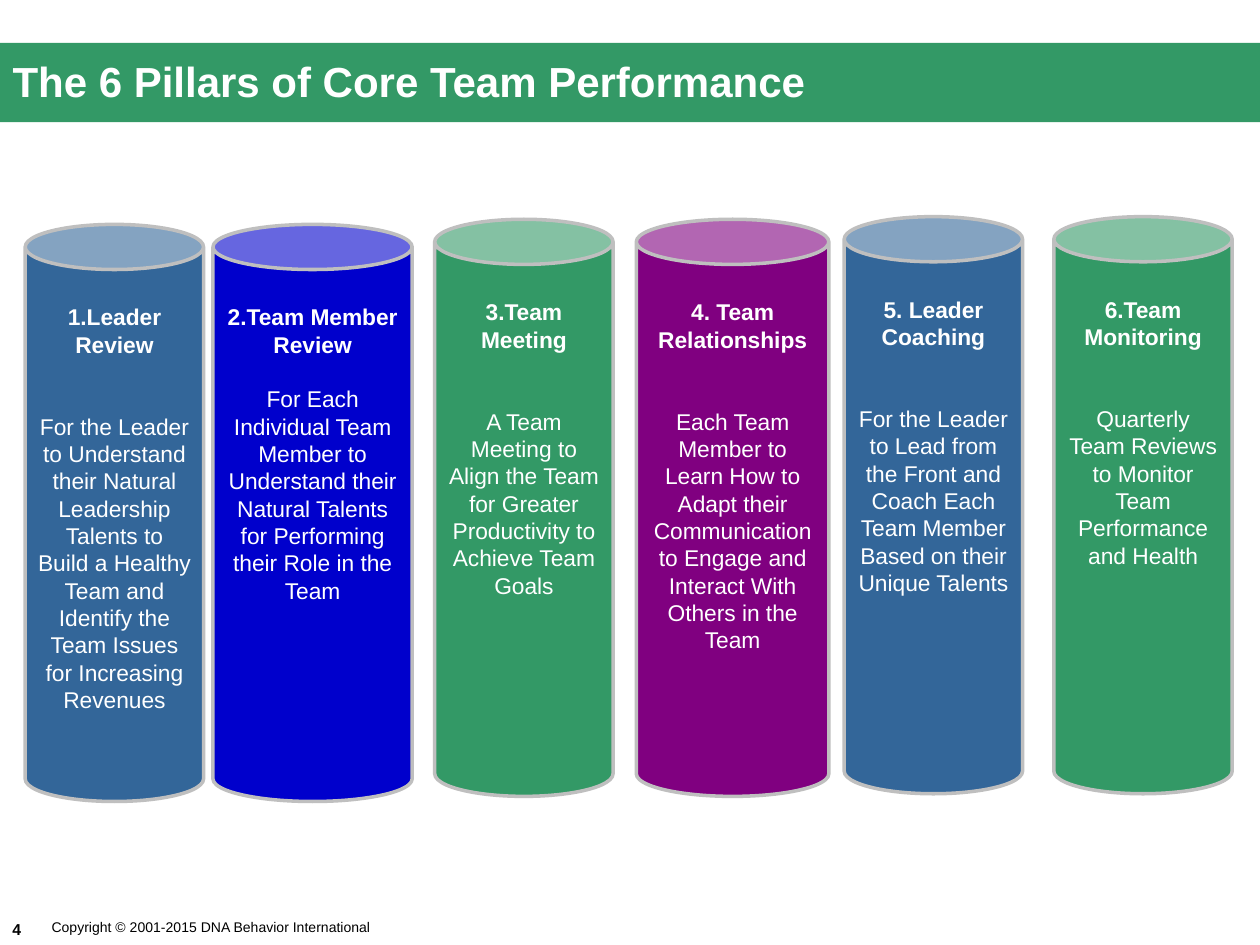
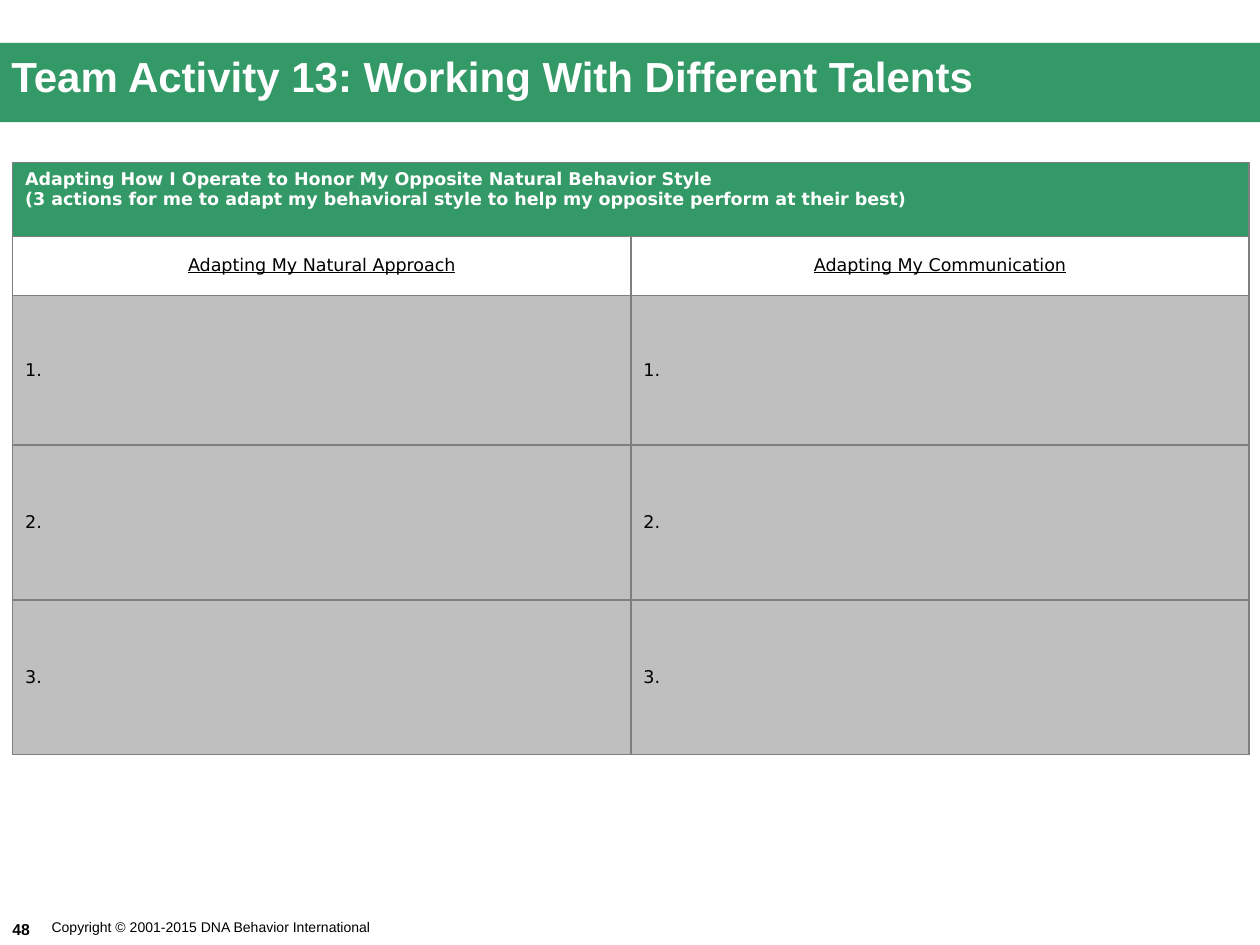
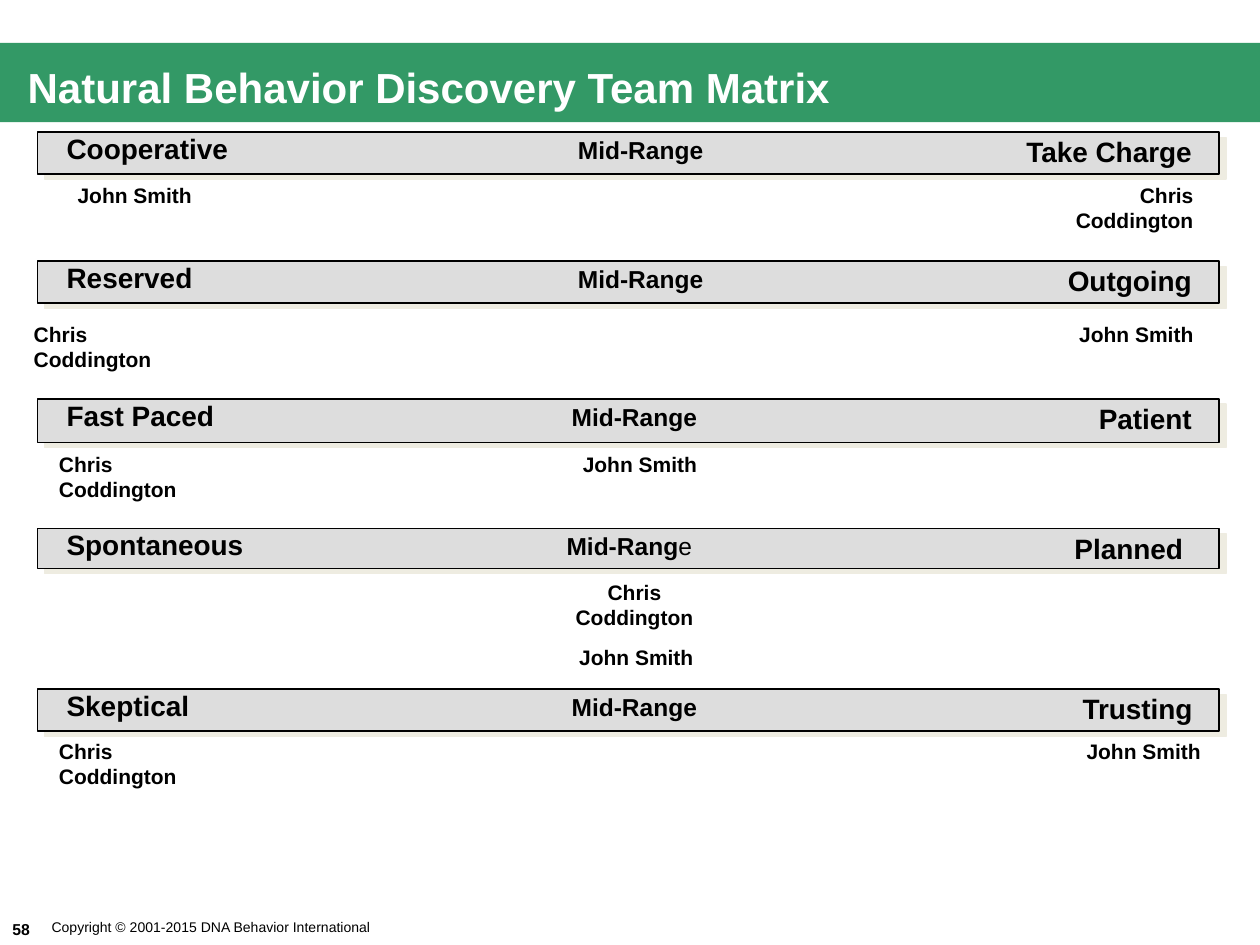
"""Build three team performance slides: pillars, an activity table and a behavior matrix."""
from dataclasses import dataclass, replace

from lxml import etree
from pptx import Presentation
from pptx.dml.color import RGBColor
from pptx.enum.shapes import MSO_SHAPE
from pptx.enum.text import MSO_ANCHOR, MSO_AUTO_SIZE, PP_ALIGN
from pptx.oxml.ns import qn
from pptx.util import Pt

CAN, RECTANGLE = MSO_SHAPE.CAN, MSO_SHAPE.RECTANGLE
TOP, MIDDLE = MSO_ANCHOR.TOP, MSO_ANCHOR.MIDDLE
LEFT, CENTER, RIGHT = PP_ALIGN.LEFT, PP_ALIGN.CENTER, PP_ALIGN.RIGHT
FIXED_SIZE = MSO_AUTO_SIZE.NONE
TITLE_ONLY = 5
INSETS = (7.2, 3.6, 7.2, 3.6)
LABEL_INSETS = (7.9, 3.6, 7.9, 3.6)


@dataclass(frozen=True)
class TextStyle:
    """Describe how one span of text looks."""
    size: float
    color: str = "000000"
    bold: bool = False
    font: str = "Arial"
    underline: bool = False


@dataclass(frozen=True)
class Theme:
    """Hold the colours and type styles of the deck."""
    green: str = "339966"
    steel: str = "336699"
    blue: str = "0000CC"
    purple: str = "800080"
    white: str = "FFFFFF"
    black: str = "000000"
    rim: str = "BFBFBF"
    answer: str = "BFBFBF"
    grid: str = "7F7F7F"
    bar: str = "DDDDDD"
    shade: str = "EEECE1"
    title: TextStyle = TextStyle(24, "FFFFFF", True)
    number: TextStyle = TextStyle(9, bold=True)
    copyright: TextStyle = TextStyle(8)
    pillar_head: TextStyle = TextStyle(13, "FFFFFF", True)
    pillar_body: TextStyle = TextStyle(13, "FFFFFF")
    table_head: TextStyle = TextStyle(10, "FFFFFF", True, "DejaVu Sans")
    table_column: TextStyle = TextStyle(10, font="DejaVu Sans", underline=True)
    table_body: TextStyle = TextStyle(10, font="DejaVu Sans")
    trait: TextStyle = TextStyle(16, bold=True)
    mid_range: TextStyle = TextStyle(14, bold=True)
    person: TextStyle = TextStyle(12, bold=True)


class Deck:
    """Draw elements in one style on the current page."""

    def __init__(self, theme):
        """Start an empty deck of 10 by 7.5 inch pages."""
        self.theme = theme
        self.file = Presentation()
        self.file.slide_width, self.file.slide_height = Pt(720), Pt(540)
        self.page = None

    def start_page(self, number, title, place, anchor=MIDDLE, insets=INSETS, line_spacing=None):
        """Add a page with its band, title, number and copyright line."""
        theme = self.theme
        self.page = self.file.slides.add_slide(self.file.slide_layouts[TITLE_ONLY])
        heading = self.page.shapes.title
        heading.left, heading.top, heading.width, heading.height = map(Pt, place)
        self.fill_frame(heading.text_frame, [[(title, theme.title)]], anchor=anchor, insets=insets)
        heading.text_frame.paragraphs[0].line_spacing = line_spacing
        band = self.shape(RECTANGLE, (0, 24.5, 720, 45.4), theme.green)
        heading.element.addprevious(band.element)
        self.text((0, 522, 51, 18), [[(str(number), theme.number)]], anchor=MIDDLE)
        notice = "Copyright © 2001-2015 DNA Behavior International"
        self.text((22.4, 521.3, 200, 17.3), [[(notice, theme.copyright)]], anchor=MIDDLE, wrap=False)

    def fill_frame(self, frame, paragraphs, align=LEFT, anchor=TOP, insets=INSETS, gap=0, wrap=True):
        """Fill a text frame with paragraphs made of styled spans."""
        frame.word_wrap = wrap
        frame.auto_size = FIXED_SIZE
        frame.vertical_anchor = anchor
        frame.margin_left, frame.margin_top, frame.margin_right, frame.margin_bottom = map(Pt, insets)
        self.add_paragraphs(frame, paragraphs, align, gap)

    def add_paragraphs(self, frame, paragraphs, align, gap=0):
        """Add paragraphs run by run, with a gap between them."""
        for index, spans in enumerate(paragraphs):
            para = frame.add_paragraph() if index else frame.paragraphs[0]
            para.alignment = align
            para.space_before = Pt(gap if index else 0)
            for words, style in spans:
                span = para.add_run()
                span.text = words
                font = span.font
                font.name, font.size, font.bold = style.font, Pt(style.size), style.bold
                font.underline = style.underline
                font.color.rgb = RGBColor.from_string(style.color)

    def text(self, place, paragraphs, group=None, **options):
        """Add a text box to the page or to a group."""
        box = (group or self.page).shapes.add_textbox(*map(Pt, place))
        self.fill_frame(box.text_frame, paragraphs, **options)

    def shape(self, kind, place, fill, line=None, width=1, group=None):
        """Add a filled preset shape without a shadow."""
        shape = (group or self.page).shapes.add_shape(kind, *map(Pt, place))
        shape.fill.solid()
        shape.fill.fore_color.rgb = RGBColor.from_string(fill)
        if line:
            shape.line.color.rgb = RGBColor.from_string(line)
            shape.line.width = Pt(width)
        else:
            shape.line.fill.background()
        shape.shadow.inherit = False
        return shape

    def cast_shadow(self, shape, color, distance, angle):
        """Give a shape a hard offset shadow."""
        effects = shape.element.spPr.find(qn("a:effectLst"))
        shadow = etree.SubElement(effects, qn("a:outerShdw"), blurRad="0", dist=str(Pt(distance)),
                                  dir=str(angle * 60000), algn="ctr", rotWithShape="0")
        etree.SubElement(shadow, qn("a:srgbClr"), val=color)

    def pillar(self, place, color, head, body, blank_lines):
        """Add a labelled cylinder with a rim of constant depth."""
        rim_depth, line_height = 25.8, 15.6
        can = self.shape(CAN, place, color, self.theme.rim, 2)
        can.adjustments[0] = rim_depth / place[2]
        self.fill_frame(can.text_frame,
                        [[(head, self.theme.pillar_head)], [(body, self.theme.pillar_body)]],
                        align=CENTER, insets=(7.2, 3.6 + line_height, 7.2, 3.6),
                        gap=blank_lines * line_height)

    def table(self, place, row_heights, columns):
        """Add a plain table with the given row heights."""
        table = self.page.shapes.add_table(len(row_heights), columns, *map(Pt, place)).table
        for row, height in zip(table.rows, row_heights):
            row.height = Pt(height)
        return table

    def cell(self, cell, paragraphs, fill, align=LEFT, anchor=MIDDLE):
        """Fill, border and label one table cell."""
        cell.fill.solid()
        cell.fill.fore_color.rgb = RGBColor.from_string(fill)
        cell.vertical_anchor = anchor
        cell.margin_left, cell.margin_top, cell.margin_right, cell.margin_bottom = map(Pt, INSETS)
        self.add_paragraphs(cell.text_frame, paragraphs, align)
        properties = cell._tc.get_or_add_tcPr()
        for index, side in enumerate(("a:lnL", "a:lnR", "a:lnT", "a:lnB")):
            border = etree.Element(qn(side), w=str(Pt(1)))
            solid = etree.SubElement(border, qn("a:solidFill"))
            etree.SubElement(solid, qn("a:srgbClr"), val=self.theme.grid)
            properties.insert(index, border)

    def scale(self, top, height, low, middle, center, high, right):
        """Add a shadowed bar with a trait at each end and a middle label."""
        theme = self.theme
        group = self.page.shapes.add_group_shape()
        bar = self.shape(RECTANGLE, (21.6, top, 675, height), theme.bar, theme.black, 0.75, group)
        self.cast_shadow(bar, theme.shade, 5, 37)
        for label, place, align in (
            (middle, (center - 84, top - 1.9, 168, 24.5), CENTER),
            ([(low, theme.trait)], (30.2, top - 3.8, 200, 27.4), LEFT),
            ([(high, theme.trait)], (right - 111, top - 1.9, 111, 27.4), RIGHT),
        ):
            self.text(place, [label], group, align=align, insets=LABEL_INSETS)

    def person(self, name, left, top, width, align=LEFT):
        """Add the name of a person below a scale."""
        self.text((left, top, width, 36.7), [[(name, self.theme.person)]], align=align)


def build_pillars(deck):
    """Build the page with six pillars."""
    theme = deck.theme
    deck.start_page(4, "The 6 Pillars of Core Team Performance", (0, 25.9, 720, 46.1), line_spacing=0.8)
    pillars = (
        (14.4, 128.2, 101.9, theme.steel, 2, "1.Leader Review",
         "For the Leader to Understand their Natural Leadership Talents to Build a Healthy Team "
         "and Identify the Team Issues for Increasing Revenues"),
        (121.7, 128.2, 113.8, theme.blue, 1, "2.Team Member Review",
         "For Each Individual Team Member to Understand their Natural Talents for Performing "
         "their Role in the Team"),
        (248.4, 125.3, 101.9, theme.green, 2, "3.Team Meeting",
         "A Team Meeting to Align the Team for Greater Productivity to Achieve Team Goals"),
        (363.6, 125.3, 110, theme.purple, 2, "4. Team Relationships",
         "Each Team Member to Learn How to Adapt their Communication to Engage and Interact "
         "With Others in the Team"),
        (482.4, 123.8, 101.9, theme.steel, 2, "5. Leader Coaching",
         "For the Leader to Lead from the Front and Coach Each Team Member Based on their "
         "Unique Talents"),
        (602.2, 123.8, 101.9, theme.green, 2, "6.Team Monitoring",
         "Quarterly Team Reviews to Monitor Team Performance and Health"),
    )
    for left, top, width, color, blank_lines, head, body in pillars:
        deck.pillar((left, top, width, 329.8), color, head, body, blank_lines)


def build_activity(deck):
    """Build the page with the activity table."""
    theme = deck.theme
    deck.start_page(48, "Team Activity 13: Working With Different Talents", (0, 25.2, 708, 36),
                    anchor=TOP, insets=(6.5, 3.6, 6.5, 3.6))
    table = deck.table((7.2, 92.9, 706.6, 338.4), (42.2, 33.8, 85.4, 88.5, 88.5), 2)
    table.cell(0, 0).merge(table.cell(0, 1))
    heading = (
        "Adapting How I Operate to Honor My Opposite Natural Behavior Style",
        "(3 actions for me to adapt my behavioral style to help my opposite perform at their best)",
    )
    deck.cell(table.cell(0, 0), [[(words, theme.table_head)] for words in heading], theme.green, anchor=TOP)
    deck.cell(table.cell(0, 1), [], theme.green)
    for column, topic in enumerate(("Adapting My Natural Approach", "Adapting My Communication")):
        deck.cell(table.cell(1, column), [[(topic, theme.table_column)]], theme.white, CENTER)
        for action in (1, 2, 3):
            deck.cell(table.cell(action + 1, column), [[(f"{action}.", theme.table_body)]], theme.answer)


def build_matrix(deck):
    """Build the page with five behavior scales."""
    theme = deck.theme
    deck.start_page(58, "Natural Behavior Discovery Team Matrix", (0, 28.1, 639.4, 43.2),
                    insets=(15.8, 0, 0, 0))
    mid_range = [("Mid-Range", theme.mid_range)]
    mixed = [("Mid-Rang", theme.mid_range), ("e", replace(theme.mid_range, bold=False))]
    scales = (
        (75.4, 24, "Cooperative", mid_range, 366.1, "Take Charge", 689),
        (149.2, 24, "Reserved", mid_range, 366.1, "Outgoing", 689),
        (228, 25, "Fast Paced", mid_range, 362.5, "Patient", 689),
        (301.8, 23, "Spontaneous", mixed, 359.6, "Planned", 684),
        (393.8, 24, "Skeptical", mid_range, 362.5, "Trusting", 689.5),
    )
    for scale in scales:
        deck.scale(*scale)
    john, chris = "John Smith", "Chris Coddington"
    people = (
        (john, 25.9, 100.8, 102.2, CENTER),
        (chris, 575.3, 100.8, 113.8, RIGHT),
        (chris, 12.2, 180, 107.3, LEFT),
        (john, 575.3, 180, 113.8, RIGHT),
        (chris, 26.6, 254.2, 107.3, LEFT),
        (john, 314.6, 254.2, 102.2, CENTER),
        (chris, 308.9, 327.6, 107.3, CENTER),
        (john, 306.7, 365, 113.8, CENTER),
        (chris, 26.6, 418.3, 107.3, LEFT),
        (john, 591.1, 418.3, 102.2, RIGHT),
    )
    for person in people:
        deck.person(*person)


def main():
    """Build and save the deck."""
    deck = Deck(Theme())
    build_pillars(deck)
    build_activity(deck)
    build_matrix(deck)
    deck.file.save("out.pptx")


if __name__ == "__main__":
    main()
